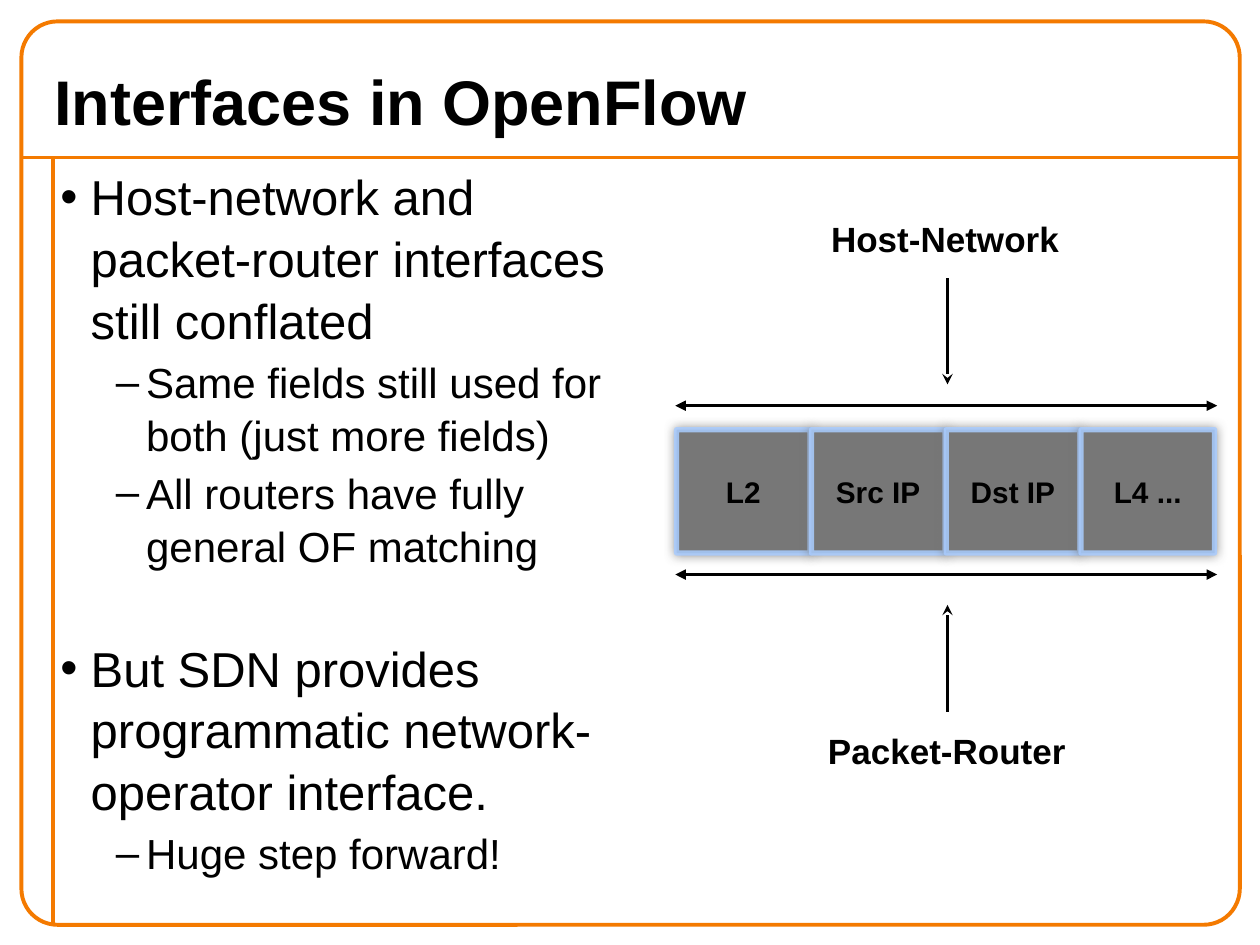
from dataclasses import dataclass

from lxml.etree import SubElement
from pptx import Presentation
from pptx.dml.color import RGBColor
from pptx.enum.shapes import MSO_CONNECTOR, MSO_SHAPE
from pptx.enum.text import MSO_ANCHOR, MSO_AUTO_SIZE, PP_ALIGN
from pptx.oxml.ns import qn
from pptx.util import Inches, Pt

BLACK = RGBColor(0x00, 0x00, 0x00)
ORANGE = RGBColor(0xF4, 0x7A, 0x00)
GRAY = RGBColor(0x77, 0x77, 0x77)
PALE_BLUE = RGBColor(0xA9, 0xCC, 0xFF)
FONT = "Arial"

# The slide is a grid of 100 columns by 75 rows
COLUMNS, ROWS = 100, 75
SLIDE_WIDTH, SLIDE_HEIGHT = Inches(10), Inches(7.5)


@dataclass(frozen=True)
class Box:
    """A rectangle in grid columns and rows."""
    left: float
    top: float
    width: float
    height: float

    def lengths(self) -> tuple:
        return (across(self.left), down(self.top),
                across(self.width), down(self.height))


@dataclass(frozen=True)
class Line:
    """A straight line in grid columns and rows, with optional arrowheads."""
    start: tuple
    end: tuple
    color: RGBColor = BLACK
    width: float = 2
    head: str = ""
    tail: str = ""


@dataclass(frozen=True)
class Item:
    """A list entry; space is the gap above it in points."""
    text: str
    level: int = 0
    space: float = 0


FRAME = Box(1.7, 1.7, 96.7, 71.7)
RULE_ROW, MARGIN_COLUMN = 12.5, 4.2
FRAME_LINES = [
    Line((1.7, RULE_ROW), (98.3, RULE_ROW), ORANGE, 2.25),
    Line((MARGIN_COLUMN, RULE_ROW), (MARGIN_COLUMN, 73.3), ORANGE, 2.25),
]

ITEMS = [
    Item("Host-network and packet-router interfaces still conflated"),
    Item("Same fields still used for both (just more fields)", 1, 2.8),
    Item("All routers have fully general OF matching", 1, 2.8),
    Item("But SDN provides programmatic network-operator interface.", 0, 37),
    Item("Huge step forward!", 1, 2.8),
]
# Per level: bullet, text size, left margin in inches
LEVELS = [("•", 28, 0.62), ("–", 24, 1.06)]
HANGING = Inches(0.24)

FIELDS = ["L2", "Src IP", "Dst IP", "L4 ..."]
FIRST_FIELD = Box(53.7, 34.1, 10.6, 9.8)
FIELD_PITCH = 10.7
SPAN_LEFT, SPAN_RIGHT, ARROW_COLUMN = 53.6, 96.6, 75.2
ARROWS = [
    Line((ARROW_COLUMN, 22.1), (ARROW_COLUMN, 30.5), tail="stealth"),
    Line((SPAN_LEFT, 32.2), (SPAN_RIGHT, 32.2), head="triangle", tail="triangle"),
    Line((SPAN_LEFT, 45.6), (SPAN_RIGHT, 45.6), head="triangle", tail="triangle"),
    Line((ARROW_COLUMN, 56.5), (ARROW_COLUMN, 48), tail="stealth"),
]
LABELS = {"Host-Network": Box(65.9, 17.2, 18.2, 3.4),
          "Packet-Router": Box(65.6, 57.9, 19.1, 3.4)}


def across(columns: float) -> int:
    return round(SLIDE_WIDTH * columns / COLUMNS)


def down(rows: float) -> int:
    return round(SLIDE_HEIGHT * rows / ROWS)


def place(shape, box: Box) -> None:
    shape.left, shape.top, shape.width, shape.height = box.lengths()


def write(paragraph, text: str, *, size: float, bold: bool = False,
          align=PP_ALIGN.CENTER) -> None:
    paragraph.alignment = align
    run = paragraph.add_run()
    run.text = text
    run.font.name, run.font.size, run.font.bold = FONT, Pt(size), bold
    run.font.color.rgb = BLACK


def prepare_frame(text_frame, *, anchor, wrap: bool = True, inset: bool = False) -> None:
    text_frame.auto_size = MSO_AUTO_SIZE.NONE
    text_frame.word_wrap = wrap
    text_frame.vertical_anchor = anchor
    text_frame.margin_left = text_frame.margin_right = Inches(0.1 if inset else 0)
    text_frame.margin_top = text_frame.margin_bottom = Inches(0.05 if inset else 0)


def draw_line(slide, line: Line) -> None:
    connector = slide.shapes.add_connector(
        MSO_CONNECTOR.STRAIGHT, across(line.start[0]), down(line.start[1]),
        across(line.end[0]), down(line.end[1]))
    connector.line.color.rgb = line.color
    connector.line.width = Pt(line.width)
    outline = connector.line._get_or_add_ln()
    for tag, kind in (("a:headEnd", line.head), ("a:tailEnd", line.tail)):
        if kind:
            SubElement(outline, qn(tag), type=kind)
    SubElement(connector.element.spPr, qn("a:effectLst"))


def draw_border(slide) -> None:
    border = slide.shapes.add_shape(MSO_SHAPE.ROUNDED_RECTANGLE, *FRAME.lengths())
    border.adjustments[0] = 0.04
    border.fill.background()
    border.line.color.rgb = ORANGE
    border.line.width = Pt(2.25)
    border.shadow.inherit = False


def add_alpha(color_element, percent: int) -> None:
    SubElement(color_element, qn("a:alpha"), val=str(percent * 1000))


def draw_field(slide, text: str, box: Box) -> None:
    field = slide.shapes.add_shape(MSO_SHAPE.RECTANGLE, *box.lengths())
    field.fill.solid()
    field.fill.fore_color.rgb = GRAY
    field.line.color.rgb = PALE_BLUE
    field.line.width = Pt(3)
    add_alpha(field.line._get_or_add_ln().find(".//" + qn("a:srgbClr")), 85)
    # Soft glow-like shadow around the field
    field.shadow.inherit = False
    effects = field.element.spPr.find(qn("a:effectLst"))
    shadow = SubElement(effects, qn("a:outerShdw"), blurRad=str(Pt(6)),
                        dist="0", dir="0", rotWithShape="0")
    add_alpha(SubElement(shadow, qn("a:srgbClr"), val=str(GRAY)), 80)
    prepare_frame(field.text_frame, anchor=MSO_ANCHOR.MIDDLE)
    write(field.text_frame.paragraphs[0], text, size=17, bold=True)


def draw_label(slide, text: str, box: Box) -> None:
    label = slide.shapes.add_textbox(*box.lengths())
    prepare_frame(label.text_frame, anchor=MSO_ANCHOR.MIDDLE, wrap=False)
    write(label.text_frame.paragraphs[0], text, size=20, bold=True)


def fill_list(text_frame, items: list) -> None:
    for index, item in enumerate(items):
        paragraph = text_frame.add_paragraph() if index else text_frame.paragraphs[0]
        bullet, size, margin = LEVELS[item.level]
        paragraph.level = item.level
        paragraph.line_spacing = 1.05
        paragraph.space_before = Pt(item.space)
        write(paragraph, item.text, size=size, align=PP_ALIGN.LEFT)
        properties = paragraph._p.get_or_add_pPr()
        properties.set("marL", str(Inches(margin)))
        properties.set("indent", str(-HANGING))
        SubElement(properties, qn("a:buFont"), typeface=FONT)
        SubElement(properties, qn("a:buChar"), char=bullet)


def main() -> None:
    presentation = Presentation()
    presentation.slide_width, presentation.slide_height = SLIDE_WIDTH, SLIDE_HEIGHT
    slide = presentation.slides.add_slide(presentation.slide_layouts[1])
    title, body = slide.placeholders

    # Orange frame, kept behind the title and list
    for line in FRAME_LINES:
        draw_line(slide, line)
    draw_border(slide)
    for placeholder in (title, body):
        placeholder.element.getparent().append(placeholder.element)

    # Title and list
    place(title, Box(3.3, 4.2, 96.7, 7.5))
    prepare_frame(title.text_frame, anchor=MSO_ANCHOR.MIDDLE, inset=True)
    write(title.text_frame.paragraphs[0], "Interfaces in OpenFlow",
          size=36, bold=True, align=PP_ALIGN.LEFT)
    place(body, Box(0, RULE_ROW, 51.2, 59.9))
    prepare_frame(body.text_frame, anchor=MSO_ANCHOR.TOP, inset=True)
    fill_list(body.text_frame, ITEMS)

    # Packet header diagram
    for arrow in ARROWS:
        draw_line(slide, arrow)
    for text, box in LABELS.items():
        draw_label(slide, text, box)
    for index, text in enumerate(FIELDS):
        draw_field(slide, text, Box(FIRST_FIELD.left + index * FIELD_PITCH,
                                    FIRST_FIELD.top, FIRST_FIELD.width,
                                    FIRST_FIELD.height))

    presentation.save("out.pptx")


if __name__ == "__main__":
    main()
